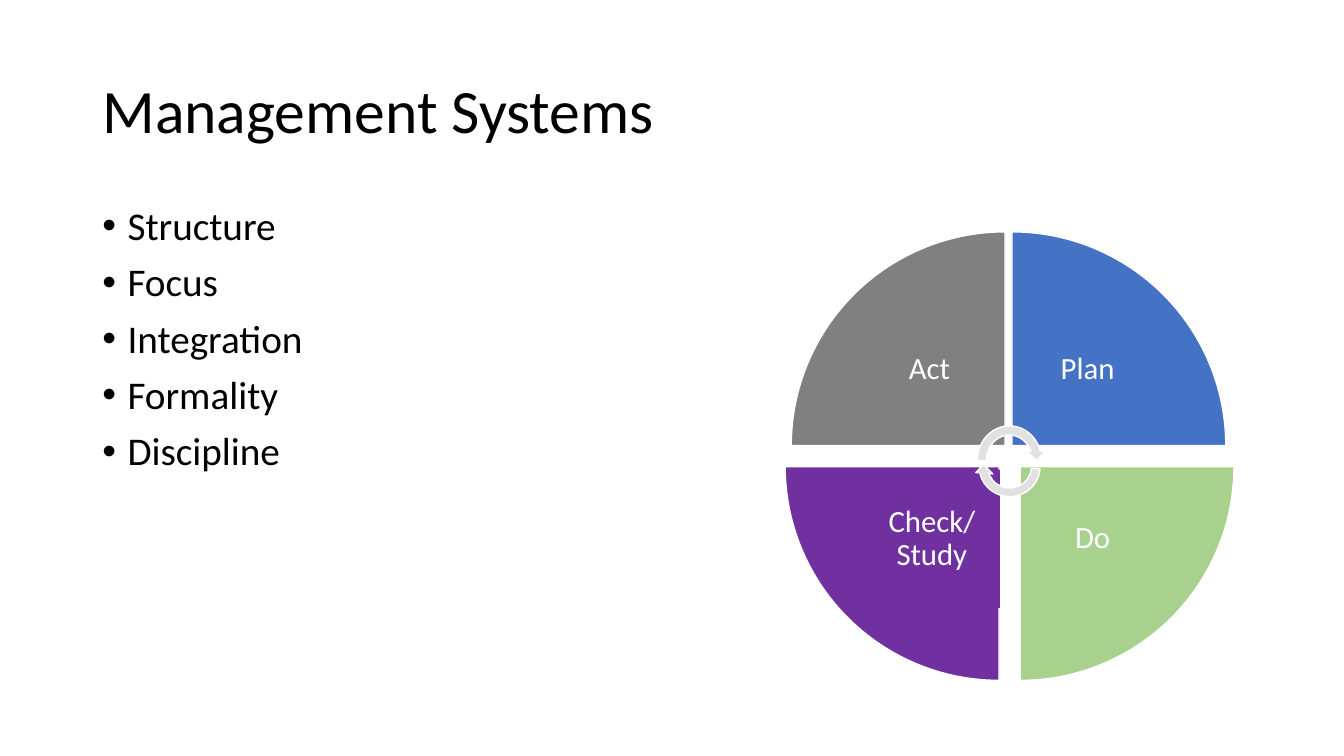
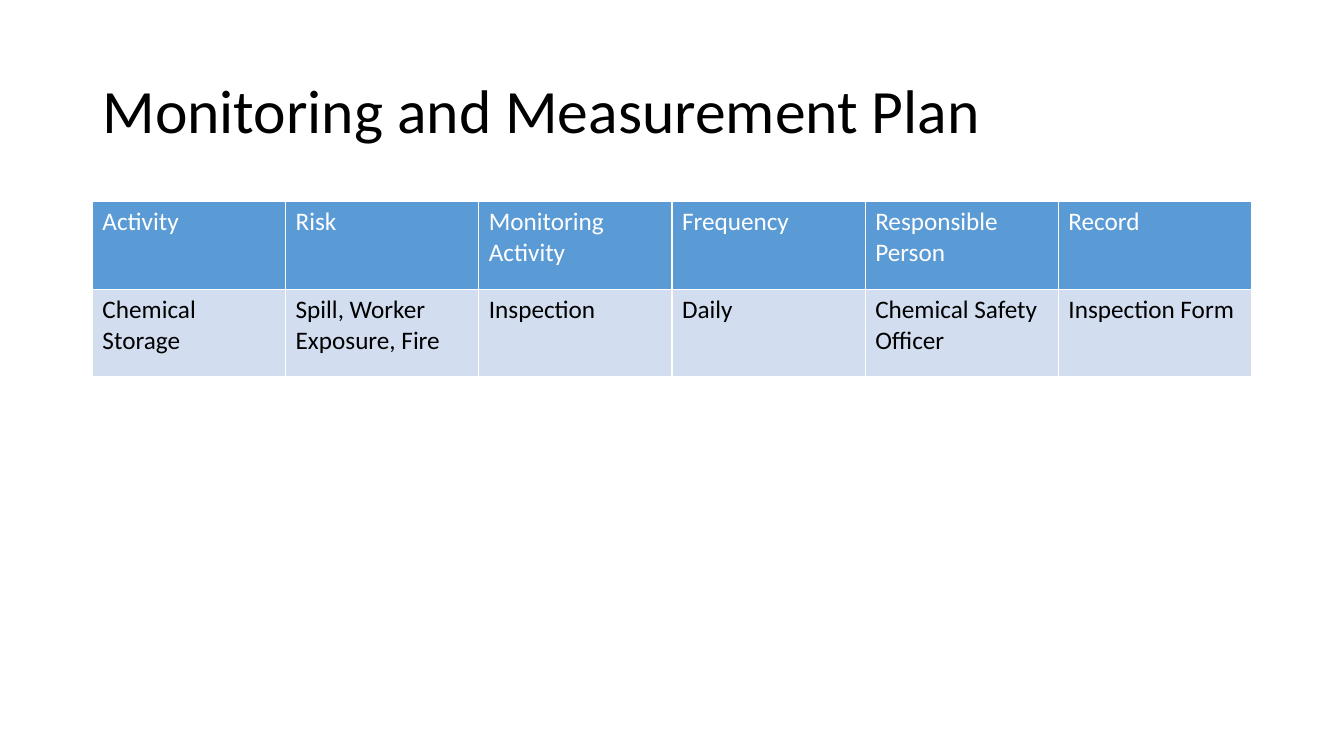
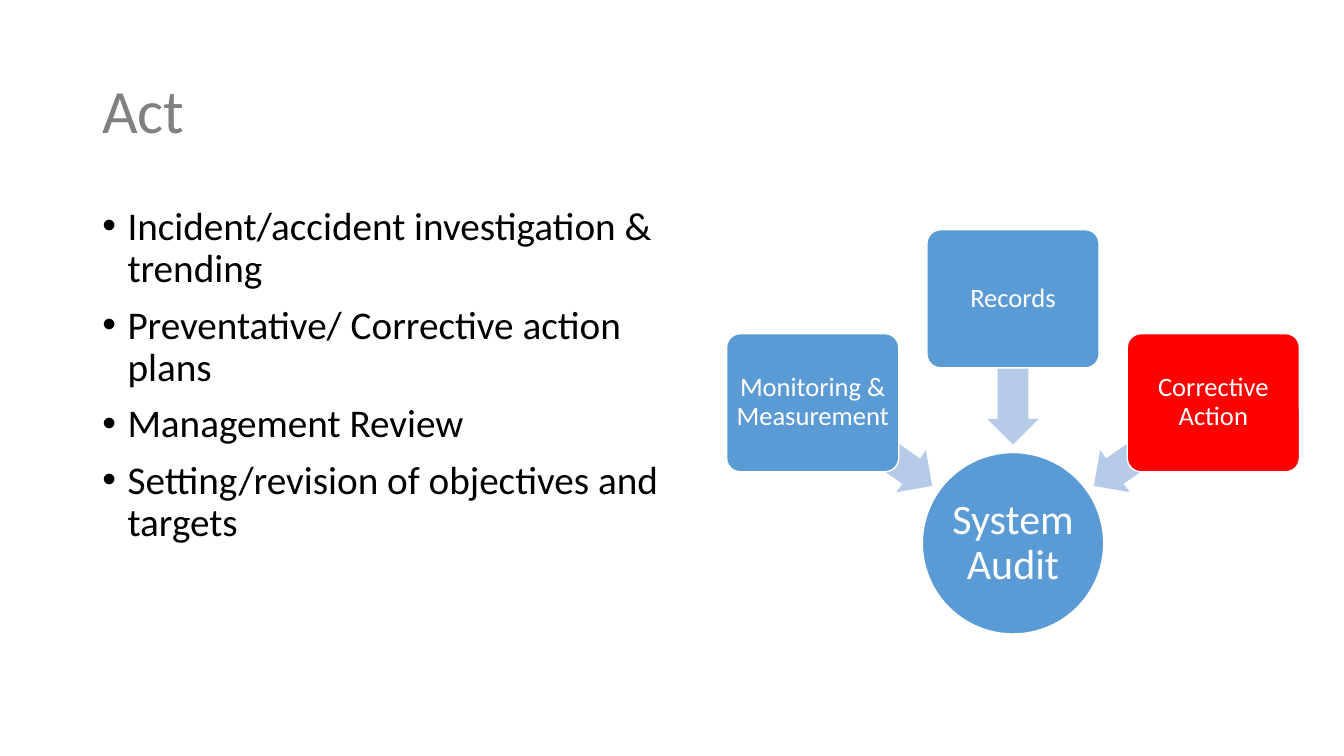
from pptx import Presentation
from pptx.dml.color import RGBColor as Color
from pptx.enum.shapes import MSO_SHAPE as Preset
from pptx.enum.text import MSO_ANCHOR as Anchor, PP_ALIGN as Align
from pptx.oxml import parse_xml
from pptx.oxml.ns import nsdecls
from pptx.util import Inches, Pt

COLORS = {
    "black": "000000", "white": "FFFFFF", "gray": "808080", "silver": "E1E1E1",
    "blue": "4472C4", "green": "A9D18E", "purple": "7030A0", "red": "FF0000",
    "sky": "5B9BD5", "pale": "D2DEEF", "mist": "B5CBE7",
}
FONT = "Calibri"
COLUMNS, ROWS = 64, 36
WIDTH, HEIGHT = Inches(13.33), Inches(7.5)
LEFT, CONTENT_TOP, CONTENT_WIDTH = 4.4, 9.6, 55.2


def color(name):
    return Color.from_string(COLORS[name])


class SlideBuilder:
    """Holds the deck, its style and the current slide; lengths are grid columns and rows."""

    def __init__(self):
        self.deck = Presentation()
        self.deck.slide_width, self.deck.slide_height = WIDTH, HEIGHT
        self.slide = None

    def grid(self, left, top, width, height):
        across, down = WIDTH / COLUMNS, HEIGHT / ROWS
        return [round(n) for n in (left * across, top * down, width * across, height * down)]

    def style(self, para, size, ink, spacing=0.9):
        if spacing:
            para.line_spacing = spacing
        para.font.name, para.font.size = FONT, Pt(size)
        para.font.color.rgb = color(ink)

    def add_slide(self, title, ink="black"):
        self.slide = self.deck.slides.add_slide(self.deck.slide_layouts[6])
        frame = self.text_frame(LEFT, 1.92, CONTENT_WIDTH, 6.96)
        frame.vertical_anchor = Anchor.MIDDLE
        frame.text = title
        self.style(frame.paragraphs[0], 44, ink)

    def text_frame(self, *area):
        frame = self.slide.shapes.add_textbox(*self.grid(*area)).text_frame
        frame.word_wrap = True
        return frame

    def bullets(self, items, width, height):
        frame = self.text_frame(LEFT, CONTENT_TOP, width, height)
        for index, item in enumerate(items):
            para = frame.add_paragraph() if index else frame.paragraphs[0]
            para.text = item
            para.space_before = Pt(10)
            para.line_spacing = 0.9
            props = para._p.get_or_add_pPr()
            props.set("marL", str(Inches(0.25)))
            props.set("indent", str(-Inches(0.25)))
            props.append(parse_xml(f'<a:buFont {nsdecls("a")} typeface="Arial"/>'))
            props.append(parse_xml(f'<a:buChar {nsdecls("a")} char="•"/>'))
            self.style(para, 28, "black")

    def shape(self, preset, area, fill=None, outlined=False, turn=0, adjust=()):
        shape = self.slide.shapes.add_shape(preset, *self.grid(*area))
        shape.shadow.inherit = False
        shape.rotation = turn
        for index, value in enumerate(adjust):
            shape.adjustments[index] = value
        if fill:
            shape.fill.solid()
            shape.fill.fore_color.rgb = color(fill)
        else:
            shape.fill.background()
        if outlined:
            shape.line.color.rgb = color("white")
            shape.line.width = Pt(1)
        else:
            shape.line.fill.background()
        return shape

    def label(self, shape, text, size, inset):
        frame = shape.text_frame
        frame.word_wrap = True
        frame.vertical_anchor = Anchor.MIDDLE
        frame.margin_left = frame.margin_right = Inches(inset)
        frame.margin_top = frame.margin_bottom = Inches(inset)
        frame.text = text
        para = frame.paragraphs[0]
        para.alignment = Align.CENTER
        self.style(para, size, "white")

    def table(self, rows, row_height):
        area = self.grid(LEFT, CONTENT_TOP, CONTENT_WIDTH, row_height * len(rows))
        table = self.slide.shapes.add_table(len(rows), len(rows[0]), *area).table
        table.first_row = table.horz_banding = False
        for row_index, row in enumerate(rows):
            fill, ink = ("pale", "black") if row_index else ("sky", "white")
            for column_index, text in enumerate(row):
                cell = table.cell(row_index, column_index)
                cell.text = text
                self.style(cell.text_frame.paragraphs[0], 18, ink, spacing=None)
                cell.fill.solid()
                cell.fill.fore_color.rgb = color(fill)
                self.cell_borders(cell)

    def cell_borders(self, cell):
        props = cell._tc.get_or_add_tcPr()
        for index, side in enumerate("LRTB"):
            props.insert(index, parse_xml(
                f'<a:ln{side} {nsdecls("a")} w="{Pt(1)}"><a:solidFill>'
                f'<a:srgbClr val="{COLORS["white"]}"/></a:solidFill></a:ln{side}>'))


def management_systems(builder):
    builder.add_slide("Management Systems")
    builder.bullets(["Structure", "Focus", "Integration", "Formality", "Discipline"],
                    CONTENT_WIDTH, 22.85)
    wedge = 10.18
    quadrants = [
        ("Act", "gray", (37.68, 11.04), (40.66, 14.02, 7.2, 7.2), None),
        ("Plan", "blue", (48.19, 11.04), (48.19, 14.02, 7.2, 7.2), None),
        ("Do", "green", (48.58, 22.22), (48.67, 22.32, 6.72, 6.62), "green"),
        ("Check/ Study", "purple", (37.39, 22.22), (41.14, 22.37, 6.48, 6.58), "purple"),
    ]
    for index, (text, fill, corner, label_area, label_fill) in enumerate(quadrants):
        builder.shape(Preset.PIE_WEDGE, (*corner, wedge, wedge), fill, True, 90 * index)
        builder.label(builder.shape(Preset.RECTANGLE, label_area, label_fill), text, 22, 0.17)
    for area, turn in (((46.32, 20.06, 3.5, 3.74), 0), ((46.42, 20.59, 3.31, 3.26), 184.5)):
        builder.shape(Preset.CIRCULAR_ARROW, area, "silver", True, turn)


def monitoring_plan(builder):
    builder.add_slide("Monitoring and Measurement Plan")
    builder.table([
        ["Activity", "Risk", "Monitoring Activity", "Frequency", "Responsible Person", "Record"],
        ["Chemical Storage", "Spill, Worker Exposure, Fire", "Inspection", "Daily",
         "Chemical Safety Officer", "Inspection Form"],
    ], 4.18)


def act(builder):
    builder.add_slide("Act", "gray")
    builder.bullets([
        "Incident/accident investigation & trending",
        "Preventative/ Corrective action plans",
        "Management Review",
        "Setting/revision of objectives and targets",
    ], 28.27, 21.84)
    center, hub = 48.24, 8.64
    audit = builder.shape(Preset.OVAL, (center - hub / 2, 21.55, hub, hub), "sky", True)
    builder.label(audit, "System Audit", 30, 0.02)
    box_width, box_height = 8.2, 6.58
    arrow_width, arrow_height = 6.96, 2.45
    inputs = [
        (-1, "Monitoring & Measurement", "sky", 15.89, 21.14),
        (0, "Records", "sky", 10.94, 17.69),
        (1, "Corrective Action", "red", 15.89, 21.14),
    ]
    for side, text, fill, box_top, arrow_middle in inputs:
        arrow_area = (center + 6.7 * side - arrow_width / 2, arrow_middle - arrow_height / 2,
                      arrow_width, arrow_height)
        builder.shape(Preset.LEFT_ARROW, arrow_area, "mist", turn=270 + 55 * side,
                      adjust=(0.6, 0.5))
        box_area = (center + 9.54 * side - box_width / 2, box_top, box_width, box_height)
        box = builder.shape(Preset.ROUNDED_RECTANGLE, box_area, fill, True, adjust=(0.1,))
        builder.label(box, text, 19, 0.04)


def main():
    builder = SlideBuilder()
    for build in (management_systems, monitoring_plan, act):
        build(builder)
    builder.deck.save("out.pptx")


if __name__ == "__main__":
    main()
